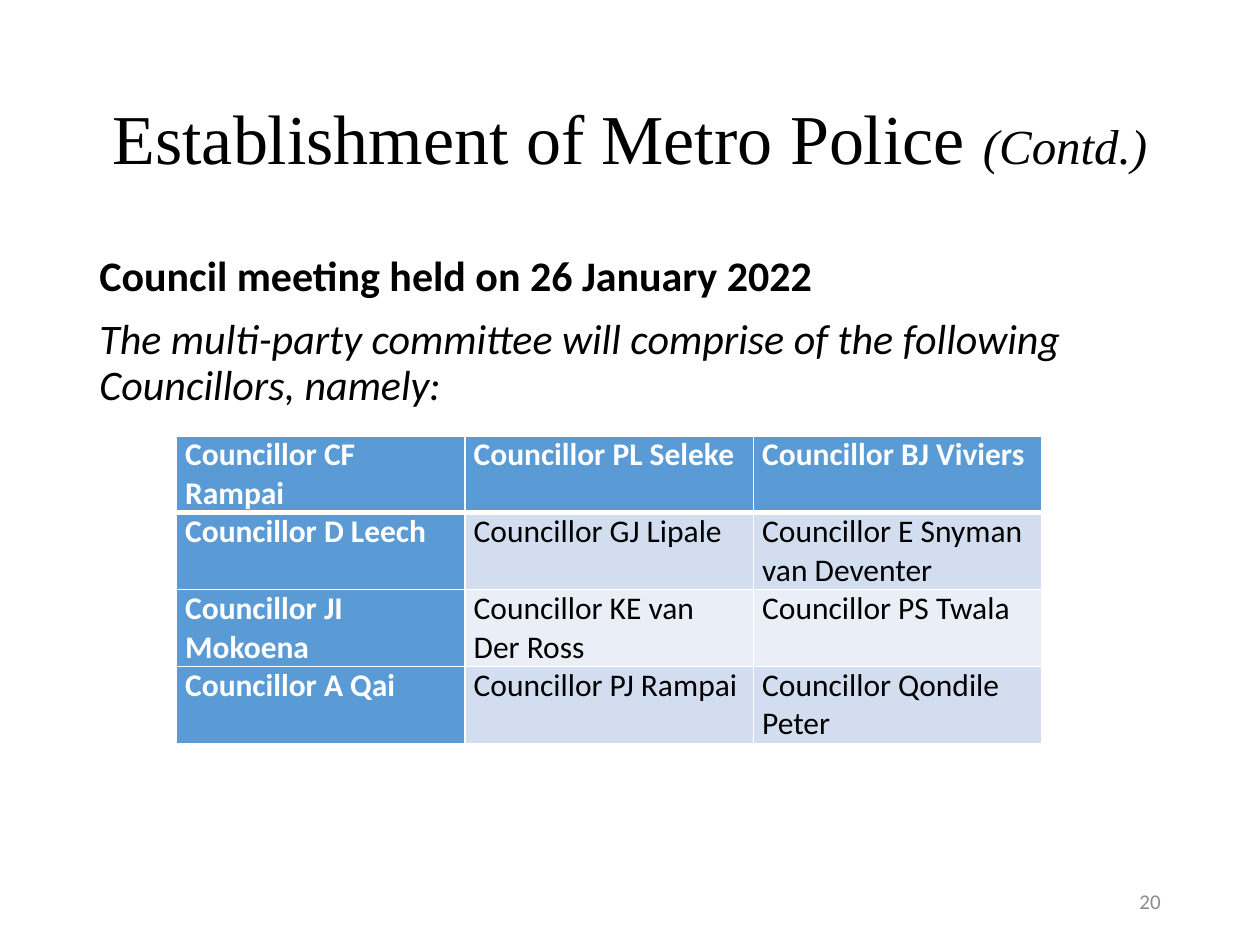
from pptx import Presentation
from pptx.dml.color import RGBColor
from pptx.enum.text import MSO_ANCHOR, PP_ALIGN
from pptx.oxml import parse_xml
from pptx.oxml.ns import nsdecls
from pptx.util import Inches, Pt

TITLE = [("Establishment of Metro Police ", {"size": 40}),
         ("(Contd.)", {"size": 28, "italic": True})]
BODY = [
    ("Council meeting held on 26 January 2022", {"bold": True}),
    ("The multi-party committee will comprise of the following Councillors, namely:",
     {"italic": True}),
]
NAMES = [
    ["Councillor CF Rampai", "Councillor PL Seleke", "Councillor BJ Viviers"],
    ["Councillor D Leech", "Councillor GJ Lipale", "Councillor E Snyman van Deventer"],
    ["Councillor JI Mokoena", "Councillor KE van Der Ross", "Councillor PS Twala"],
    ["Councillor A Qai", "Councillor PJ Rampai", "Councillor Qondile Peter"],
]
PAGE = "20"
HUE = {"ink": "000000", "white": "FFFFFF", "gray": "8C8C8C",
       "head": "5B9BD5", "odd": "D2DEEF", "even": "EAEFF7"}
WIDE, HIGH = 10, 7.5
EDGE = 0.69
SPAN = WIDE - 2 * EDGE
COL, ROW = 2.29, 0.61


def write(para, text, size=24, font="Calibri", color="ink", bold=False, italic=False):
    run = para.add_run()
    run.text = text
    face = run.font
    face.size, face.name = Pt(size), font
    face.bold, face.italic = bold, italic
    face.color.rgb = RGBColor.from_string(HUE[color])


def frame(slide, left, top, width, height, anchor=MSO_ANCHOR.MIDDLE):
    box = slide.shapes.add_textbox(*map(Inches, (left, top, width, height)))
    text = box.text_frame
    text.word_wrap = True
    text.vertical_anchor = anchor
    return text


def border(cell, **sides):
    props = cell._tc.get_or_add_tcPr()
    for spot, (side, width) in enumerate(sides.items()):
        props.insert(spot, parse_xml(
            f'<a:{side} {nsdecls("a")} w="{Pt(width)}"><a:solidFill>'
            f'<a:srgbClr val="{HUE["white"]}"/></a:solidFill></a:{side}>'))


def grid(slide):
    rows, cols = len(NAMES), len(NAMES[0])
    table = slide.shapes.add_table(
        rows, cols, Inches(1.4), Inches(3.46),
        Inches(cols * COL), Inches(rows * ROW)).table
    table.first_col = True
    for col in table.columns:
        col.width = Inches(COL)
    for r, names in enumerate(NAMES):
        table.rows[r].height = Inches(ROW)
        for c, name in enumerate(names):
            cell = table.cell(r, c)
            head = r == 0 or c == 0
            fill = "head" if head else "odd" if r % 2 else "even"
            cell.fill.solid()
            cell.fill.fore_color.rgb = RGBColor.from_string(HUE[fill])
            cell.margin_left = cell.margin_right = Inches(0.07)
            cell.margin_top = cell.margin_bottom = 0
            write(cell.text_frame.paragraphs[0], name, size=18, bold=head,
                  color="white" if head else "ink")
            border(cell, lnL=1, lnR=1, lnT=3 if r == 1 else 1, lnB=3 if r == 0 else 1)


def main():
    deck = Presentation()
    deck.slide_width, deck.slide_height = Inches(WIDE), Inches(HIGH)
    slide = deck.slides.add_slide(deck.slide_layouts[6])

    para = frame(slide, EDGE, 0.4, SPAN, 1.45).paragraphs[0]
    para.alignment = PP_ALIGN.CENTER
    para.line_spacing = 0.9
    for text, style in TITLE:
        write(para, text, font="Times New Roman", **style)

    body = frame(slide, EDGE, 1.98, SPAN, 4.76, MSO_ANCHOR.TOP)
    for i, (text, style) in enumerate(BODY):
        para = body.add_paragraph() if i else body.paragraphs[0]
        para.line_spacing = 0.9
        para.space_before = Pt(10)
        write(para, text, **style)

    para = frame(slide, WIDE - EDGE - 2.25, 6.95, 2.25, 0.4).paragraphs[0]
    para.alignment = PP_ALIGN.RIGHT
    write(para, PAGE, size=12, color="gray")

    grid(slide)
    deck.save("out.pptx")


if __name__ == "__main__":
    main()
